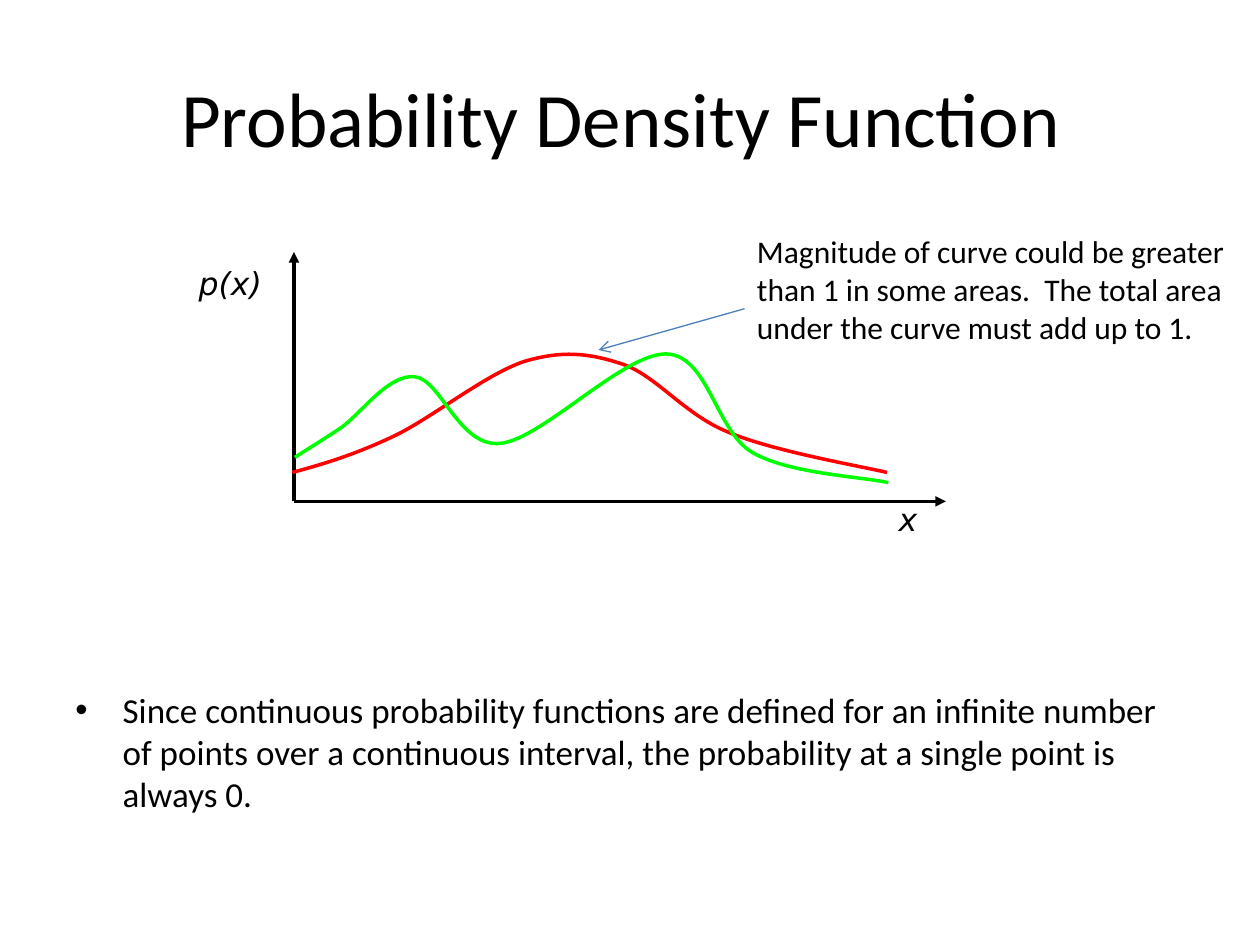
"""Build the probability density function slide."""
from lxml.etree import SubElement
from pptx import Presentation
from pptx.dml.color import RGBColor
from pptx.enum.shapes import MSO_CONNECTOR as Connector
from pptx.enum.text import MSO_ANCHOR as Anchor, MSO_AUTO_SIZE as AutoSize, PP_ALIGN as Align
from pptx.oxml.ns import qn
from pptx.util import Pt

TITLE_ONLY = 5

RED_CURVE = [
    (167, 270), (185.8, 265), (204.5, 259.2), (226.8, 248.4),
    (248.4, 237.6), (277.9, 213.8), (299.5, 206.6),
    (321.1, 200.2), (336.2, 201.6), (355.7, 208.1),
    (375.1, 214.6), (391, 236.9), (416.2, 247),
    (441.4, 257.8), (491.8, 266.4), (506.9, 270),
]
GREEN_CURVE = [
    (168.5, 261.4), (172.8, 258.5), (183.6, 252), (194.4, 244.8),
    (205.9, 236.9), (221.8, 213.8), (236.9, 215.3),
    (252, 216.7), (262.1, 255.6), (285.8, 253.4),
    (309.6, 251.3), (356.4, 201.6), (380.9, 202.3),
    (404.6, 203), (409, 246.2), (429.8, 258.5),
    (450.7, 270.7), (491, 272.2), (507.6, 275.8),
]


def color(value):
    return RGBColor.from_string(value)


def write(frame, text, size=18, font="Calibri", ink="000000",
          italic=False, align=Align.LEFT, spacing=None):
    para = frame.paragraphs[0]
    para.alignment = align
    para.line_spacing = spacing
    span = para.add_run()
    span.text = text
    span.font.size = Pt(size)
    span.font.name = font
    span.font.italic = italic
    span.font.color.rgb = color(ink)
    return para


def bend(shape):
    lines = list(shape._element.iter(qn("a:lnTo")))
    outline = lines[0].getparent()
    for first in range(0, len(lines), 3):
        cubic = SubElement(outline, qn("a:cubicBezTo"))
        for line in lines[first:first + 3]:
            cubic.append(line[0])
            outline.remove(line)


class SlideBuilder:
    def __init__(self, page, ink="000000", weight=2, label_font="DejaVu Sans"):
        self.page = page
        self.ink = ink
        self.weight = weight
        self.label_font = label_font

    def title(self, text, left, top, width, height):
        box = self.page.shapes.title
        box.left, box.top, box.width, box.height = map(Pt, (left, top, width, height))
        box.text_frame.vertical_anchor = Anchor.MIDDLE
        write(box.text_frame, text, size=44, ink=self.ink, align=Align.CENTER)

    def text(self, text, left, top, width, height, wrap=True, **style):
        box = self.page.shapes.add_textbox(*map(Pt, (left, top, width, height)))
        box.text_frame.word_wrap = wrap
        box.text_frame.auto_size = AutoSize.NONE
        return write(box.text_frame, text, ink=self.ink, **style)

    def label(self, text, left, top, width, height):
        self.text(text, left, top, width, height, wrap=False,
                  font=self.label_font, italic=True, spacing=0.9)

    def bullet(self, text, left, top, width, height, indent=27, **style):
        para = self.text(text, left, top, width, height, **style)
        properties = para._p.get_or_add_pPr()
        properties.set("marL", str(Pt(indent)))
        properties.set("indent", str(-Pt(indent)))
        SubElement(properties, qn("a:buFont"), typeface="Arial")
        SubElement(properties, qn("a:buChar"), char="•")

    def arrow(self, start, end, ink=None, weight=None, head="triangle"):
        line = self.page.shapes.add_connector(Connector.STRAIGHT, *map(Pt, start + end))
        line.line.color.rgb = color(ink or self.ink)
        line.line.width = Pt(weight or self.weight)
        SubElement(line.line._get_or_add_ln(), qn("a:tailEnd"), type=head)
        SubElement(line._element.spPr, qn("a:effectLst"))

    def curve(self, nodes, ink):
        start, *rest = [(Pt(x), Pt(y)) for x, y in nodes]
        outline = self.page.shapes.build_freeform(*start)
        outline.add_line_segments(rest, close=False)
        shape = outline.convert_to_shape()
        bend(shape)
        shape.shadow.inherit = False
        shape.fill.background()
        shape.line.color.rgb = color(ink)
        shape.line.width = Pt(self.weight)


def main():
    deck = Presentation()
    deck.slide_width, deck.slide_height = Pt(720), Pt(540)
    builder = SlideBuilder(deck.slides.add_slide(deck.slide_layouts[TITLE_ONLY]))

    builder.title("Probability Density Function ", 36, 21.6, 648, 90)
    builder.bullet("Since continuous probability functions are defined for an infinite "
                   "number of points over a continuous interval, the probability at a "
                   "single point is always 0.", 36, 390, 648, 95, size=20)

    origin = (168, 286.5)
    builder.arrow(origin, (540.5, 286.5))
    builder.arrow(origin, (168, 144))
    builder.curve(RED_CURVE, "FF0000")
    builder.curve(GREEN_CURVE, "00FF00")
    builder.label("x", 506.4, 284.5, 25, 26.5)
    builder.label("p(x)", 106.5, 149.5, 52.5, 26.5)

    builder.text("Magnitude of curve could be greater than 1 in some areas.  "
                 "The total area under the curve must add up to 1.",
                 425.5, 129.2, 288, 94.5)
    builder.arrow((425.5, 176.4), (342, 200), ink="4B7EBC", weight=0.75, head="arrow")

    deck.save("out.pptx")


if __name__ == "__main__":
    main()
